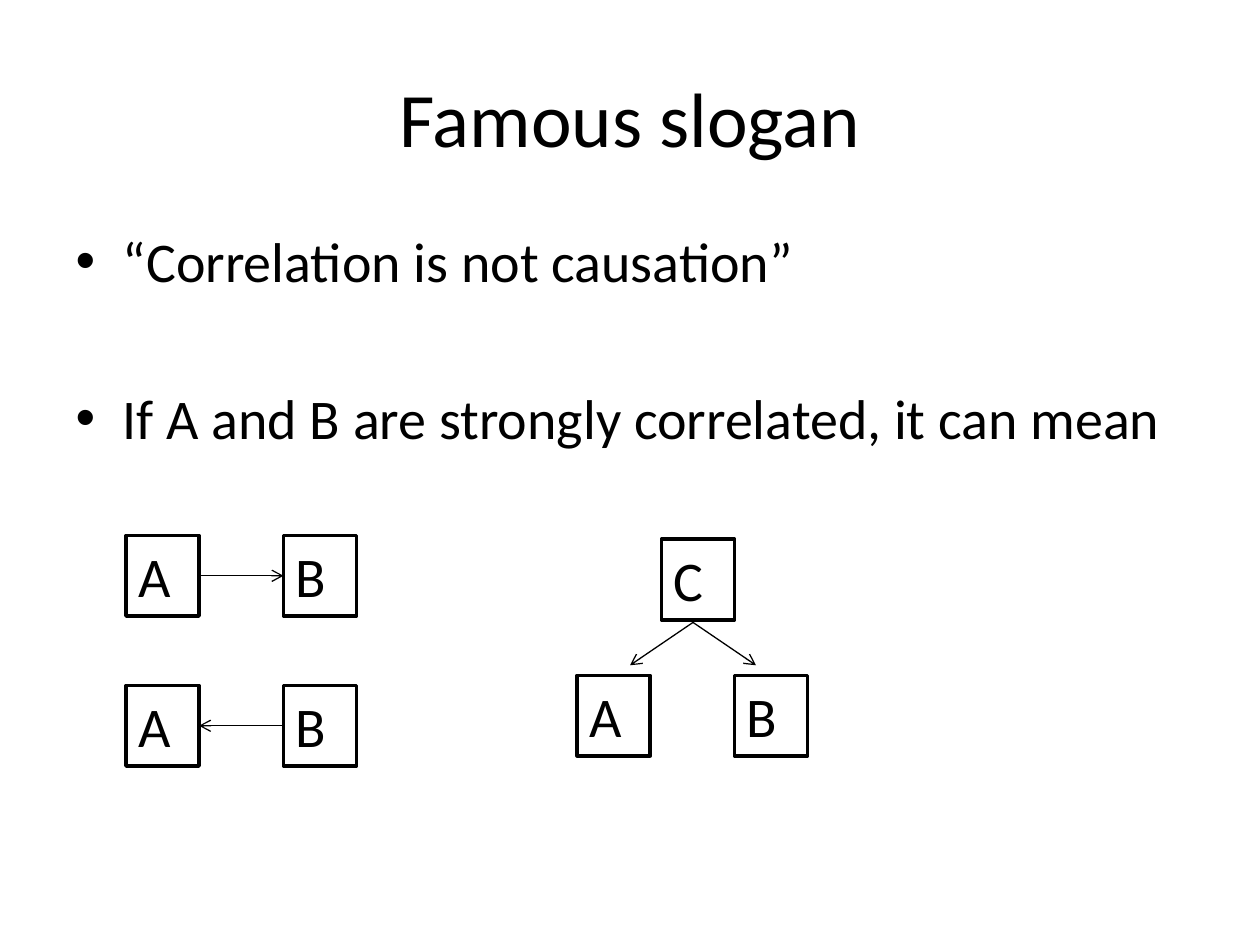
from pptx import Presentation
from pptx.dml.color import RGBColor as Rgb
from pptx.enum.shapes import MSO_CONNECTOR as Line, MSO_SHAPE as Kind
from pptx.enum.text import MSO_ANCHOR as Anchor, MSO_AUTO_SIZE as Fit, PP_ALIGN as Align
from pptx.oxml.ns import qn
from pptx.util import Inches, Pt
from lxml.etree import SubElement

HUES = {"ink": "000000", "paper": "FFFFFF"}
FONT = "Calibri"
WIDE, HIGH = 0.58, 0.64  # letter box
STEP = 1.25  # from A to B
TOP, LEFT, BOTTOM, RIGHT = range(4)  # box sides


def hue(name):
    return Rgb.from_string(HUES[name])


def place(shape, x, y, w, h):
    shape.left, shape.top = Inches(x), Inches(y)
    shape.width, shape.height = Inches(w), Inches(h)


def write(para, text, size):
    run = para.add_run()
    run.text = text
    run.font.name, run.font.size = FONT, Pt(size)
    run.font.color.rgb = hue("ink")


def add_title(slide, text, box):
    title = slide.shapes.title
    place(title, *box)
    frame = title.text_frame
    frame.vertical_anchor = Anchor.MIDDLE
    frame.paragraphs[0].alignment = Align.CENTER
    write(frame.paragraphs[0], text, 44)


def add_list(slide, items, box):
    body = slide.placeholders[1]
    place(body, *box)
    frame = body.text_frame
    frame.auto_size = Fit.NONE
    for i, (text, gap) in enumerate(items):
        para = frame.add_paragraph() if i else frame.paragraphs[0]
        para.space_before = Pt(gap)
        write(para, text, 32)


def add_box(slide, text, x, y):
    box = slide.shapes.add_shape(
        Kind.RECTANGLE, Inches(x), Inches(y), Inches(WIDE), Inches(HIGH))
    box.shadow.inherit = False
    box.fill.solid()
    box.fill.fore_color.rgb = hue("paper")
    box.line.color.rgb = hue("ink")
    box.line.width = Pt(2)
    frame = box.text_frame
    frame.word_wrap = True
    frame.auto_size = Fit.SHAPE_TO_FIT_TEXT
    frame.vertical_anchor = Anchor.TOP
    frame.paragraphs[0].alignment = Align.LEFT
    write(frame.paragraphs[0], text, 32)
    return box


def add_arrow(slide, x1, y1, x2, y2):
    arrow = slide.shapes.add_connector(
        Line.STRAIGHT, Inches(x1), Inches(y1), Inches(x2), Inches(y2))
    arrow.line.color.rgb = hue("ink")
    arrow.line.width = Pt(0.75)
    SubElement(arrow.line._get_or_add_ln(), qn("a:tailEnd"), type="arrow")
    SubElement(arrow._element.spPr, qn("a:effectLst"))
    return arrow


def add_pair(slide, x, y):
    return [add_box(slide, text, x + i * STEP, y) for i, text in enumerate("AB")]


def add_cause(slide, x, y, back=False):
    a, b = add_pair(slide, x, y)
    mid = y + HIGH / 2
    arrow = add_arrow(slide, x + WIDE, mid, x + STEP, mid)
    ends = [(a, RIGHT), (b, LEFT)]
    if back:
        ends.reverse()
    arrow.begin_connect(*ends[0])
    arrow.end_connect(*ends[1])


def add_fork(slide, x, y):
    add_pair(slide, x, y + 1.08)
    add_box(slide, "C", x + 0.67, y)
    root = x + 0.92
    for side in (0.5, -0.5):
        add_arrow(slide, root, y + 0.66, root + side, y + 1)


def main():
    deck = Presentation()
    deck.slide_width, deck.slide_height = Inches(10), Inches(7.5)
    slide = deck.slides.add_slide(deck.slide_layouts[1])

    # Title and points
    add_title(slide, "Famous slogan", (0.5, 0.3, 9, 1.25))
    add_list(slide, [
        ("“Correlation is not causation”", 6.4),
        ("If A and B are strongly correlated, it can mean", 51),
    ], (0.5, 1.75, 9, 4.95))

    # A causes B, B causes A, C causes both
    add_cause(slide, 1, 4.25)
    add_cause(slide, 1, 5.44, back=True)
    add_fork(slide, 4.58, 4.28)

    deck.save("out.pptx")


if __name__ == "__main__":
    main()
